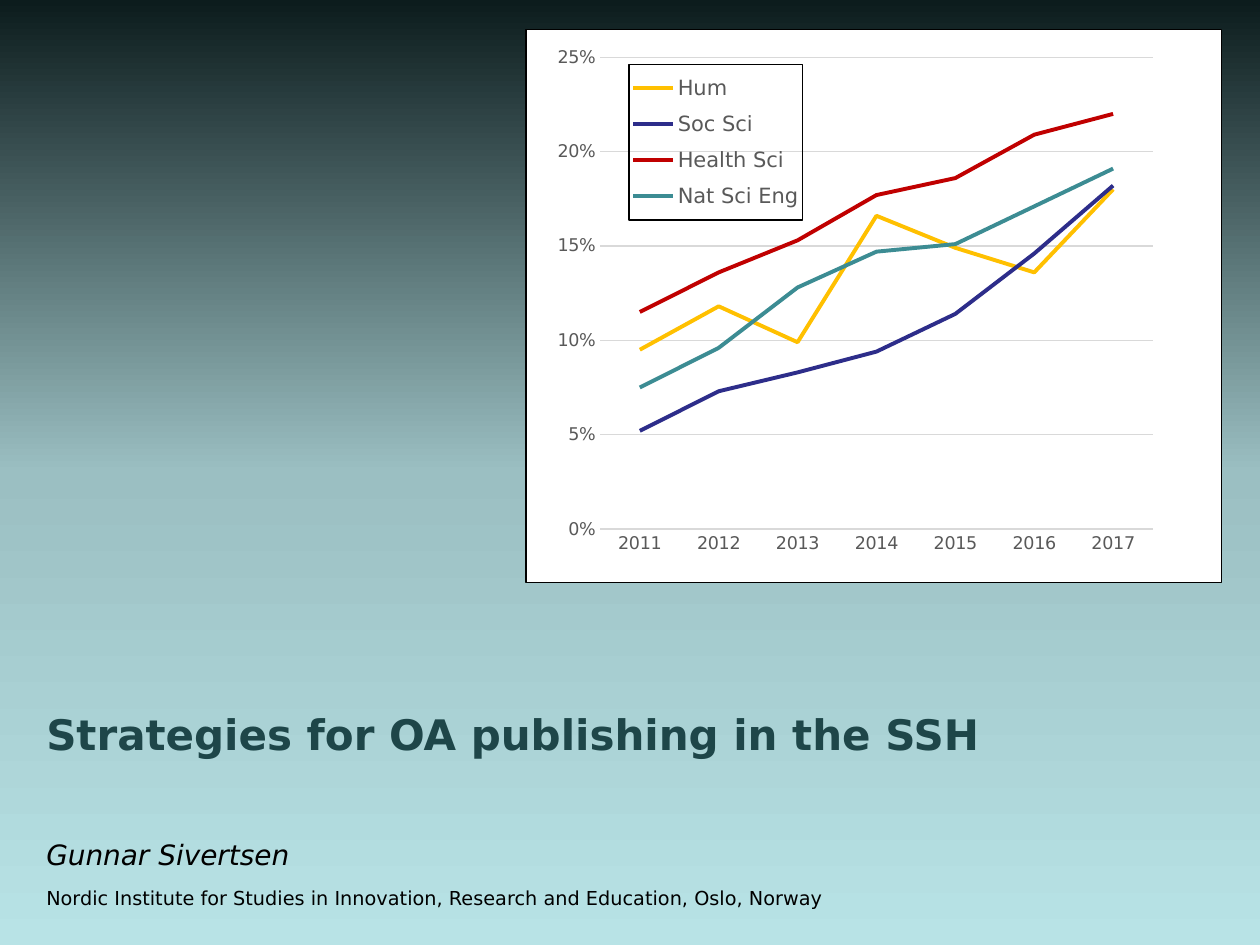
from lxml.etree import SubElement
from pptx import Presentation
from pptx.chart.data import CategoryChartData
from pptx.dml.color import RGBColor
from pptx.enum.chart import XL_CHART_TYPE, XL_LEGEND_POSITION, XL_TICK_MARK
from pptx.enum.text import MSO_ANCHOR
from pptx.oxml import parse_xml
from pptx.oxml.ns import nsdecls, qn
from pptx.util import Pt

FONT = "DejaVu Sans"
BLACK = RGBColor(0x00, 0x00, 0x00)
TITLE_TEAL = RGBColor(0x1E, 0x46, 0x49)
LABEL_GRAY = RGBColor(0x59, 0x59, 0x59)
GRID_GRAY = RGBColor(0xD9, 0xD9, 0xD9)
YELLOW = RGBColor(0xFF, 0xC0, 0x00)
NAVY = RGBColor(0x2D, 0x2D, 0x8A)
RED = RGBColor(0xC0, 0x00, 0x00)
TEAL = RGBColor(0x3C, 0x8C, 0x93)
BACKDROP = [
    (0, RGBColor(0x0C, 0x1C, 0x1D)),
    (50, RGBColor(0x9B, 0xBF, 0xC2)),
    (100, RGBColor(0xB8, 0xE3, 0xE6)),
]


def manual_layout(x, y, w, h, inner=False):
    layout = parse_xml(f"<c:layout {nsdecls('c')}><c:manualLayout/></c:layout>")
    settings = [("layoutTarget", "inner")] if inner else []
    settings += [("xMode", "edge"), ("yMode", "edge"), ("x", x), ("y", y), ("w", w), ("h", h)]
    for tag, value in settings:
        SubElement(layout[0], qn(f"c:{tag}")).set("val", str(value))
    return layout


def box_format(fill, line):
    return parse_xml(
        f"<c:spPr {nsdecls('c', 'a')}>{fill}"
        f"<a:ln w=\"9525\">{line}</a:ln></c:spPr>"
    )


prs = Presentation()
prs.slide_width, prs.slide_height = Pt(720), Pt(540)
slide = prs.slides.add_slide(prs.slide_layouts[6])

backdrop = slide.background.fill
backdrop.gradient()
backdrop.gradient_angle = 270
stops = slide.background._cSld.find(".//" + qn("a:gsLst"))
for old_stop in list(stops):
    stops.remove(old_stop)
for percent, color in BACKDROP:
    stop = SubElement(stops, qn("a:gs"), pos=str(percent * 1000))
    SubElement(stop, qn("a:srgbClr"), val=str(color))

heading = slide.shapes.add_textbox(Pt(19.4), Pt(333.4), Pt(640.8), Pt(190)).text_frame
heading.word_wrap = True
heading.vertical_anchor = MSO_ANCHOR.BOTTOM
heading_lines = [
    ("Strategies for OA publishing in the SSH", 24, TITLE_TEAL, True, False, 45),
    ("Gunnar Sivertsen", 16, BLACK, False, True, 9),
    ("Nordic Institute for Studies in Innovation, Research and Education, Oslo, Norway",
     11, BLACK, False, False, 0),
]
for index, (words, size, color, bold, italic, gap) in enumerate(heading_lines):
    line = heading.add_paragraph() if index else heading.paragraphs[0]
    line.text = words
    line.space_after = Pt(gap)
    font = line.runs[0].font
    font.name, font.size, font.bold, font.italic = FONT, Pt(size), bold, italic
    font.color.rgb = color

fields = [
    ("Hum", YELLOW, [0.095, 0.118, 0.099, 0.166, 0.149, 0.136, 0.18]),
    ("Soc Sci", NAVY, [0.052, 0.073, 0.083, 0.094, 0.114, 0.146, 0.182]),
    ("Health Sci", RED, [0.115, 0.136, 0.153, 0.177, 0.186, 0.209, 0.22]),
    ("Nat Sci Eng", TEAL, [0.075, 0.096, 0.128, 0.147, 0.151, 0.171, 0.191]),
]
shares = CategoryChartData(number_format="0%")
shares.categories = [str(year) for year in range(2011, 2018)]
for name, color, values in fields:
    shares.add_series(name, values)
chart = slide.shapes.add_chart(
    XL_CHART_TYPE.LINE, Pt(300.2), Pt(16.6), Pt(398.2), Pt(316.8), shares
).chart
chart.has_title = False
chart.font.name, chart.font.size = FONT, Pt(10)
chart.font.color.rgb = BLACK
chart.plots[0].vary_by_categories = False
for series, (name, color, values) in zip(chart.plots[0].series, fields):
    series.smooth = False
    series.format.line.width = Pt(2.25)
    series.format.line.color.rgb = color

years, percents = chart.category_axis, chart.value_axis
for axis in (years, percents):
    axis.major_tick_mark = axis.minor_tick_mark = XL_TICK_MARK.NONE
    labels = axis.tick_labels.font
    labels.name, labels.size = FONT, Pt(10)
    labels.color.rgb = LABEL_GRAY
percents.minimum_scale, percents.maximum_scale, percents.major_unit = 0, 0.25, 0.05
percents.tick_labels.number_format = "0%"
percents.tick_labels.number_format_is_linked = False
percents.format.line.fill.background()
percents.has_major_gridlines = True
for rule in (years.format.line, percents.major_gridlines.format.line):
    rule.width = Pt(0.75)
    rule.color.rgb = GRID_GRAY

chart.has_legend = True
legend = chart.legend
legend.position = XL_LEGEND_POSITION.RIGHT
legend.include_in_layout = False
legend.font.name, legend.font.size = FONT, Pt(12)
legend.font.color.rgb = LABEL_GRAY

white = '<a:solidFill><a:srgbClr val="FFFFFF"/></a:solidFill>'
black = '<a:solidFill><a:srgbClr val="000000"/></a:solidFill>'
chart_space = chart._chartSpace
chart_space.find(qn("c:chart")).addnext(box_format(white, black))

plot_area = chart_space.find(".//" + qn("c:plotArea"))
for old_layout in plot_area.findall(qn("c:layout")):
    plot_area.remove(old_layout)
plot_area.insert(0, manual_layout(0.107, 0.05, 0.794, 0.853, inner=True))
plot_area.append(box_format(white, "<a:noFill/>"))

legend_box = chart_space.find(".//" + qn("c:legend"))
for old_layout in legend_box.findall(qn("c:layout")):
    legend_box.remove(old_layout)
legend_box.find(qn("c:legendPos")).addnext(manual_layout(0.148, 0.063, 0.25, 0.281))
legend_box.find(qn("c:overlay")).addnext(box_format("<a:noFill/>", black))

prs.save("out.pptx")
